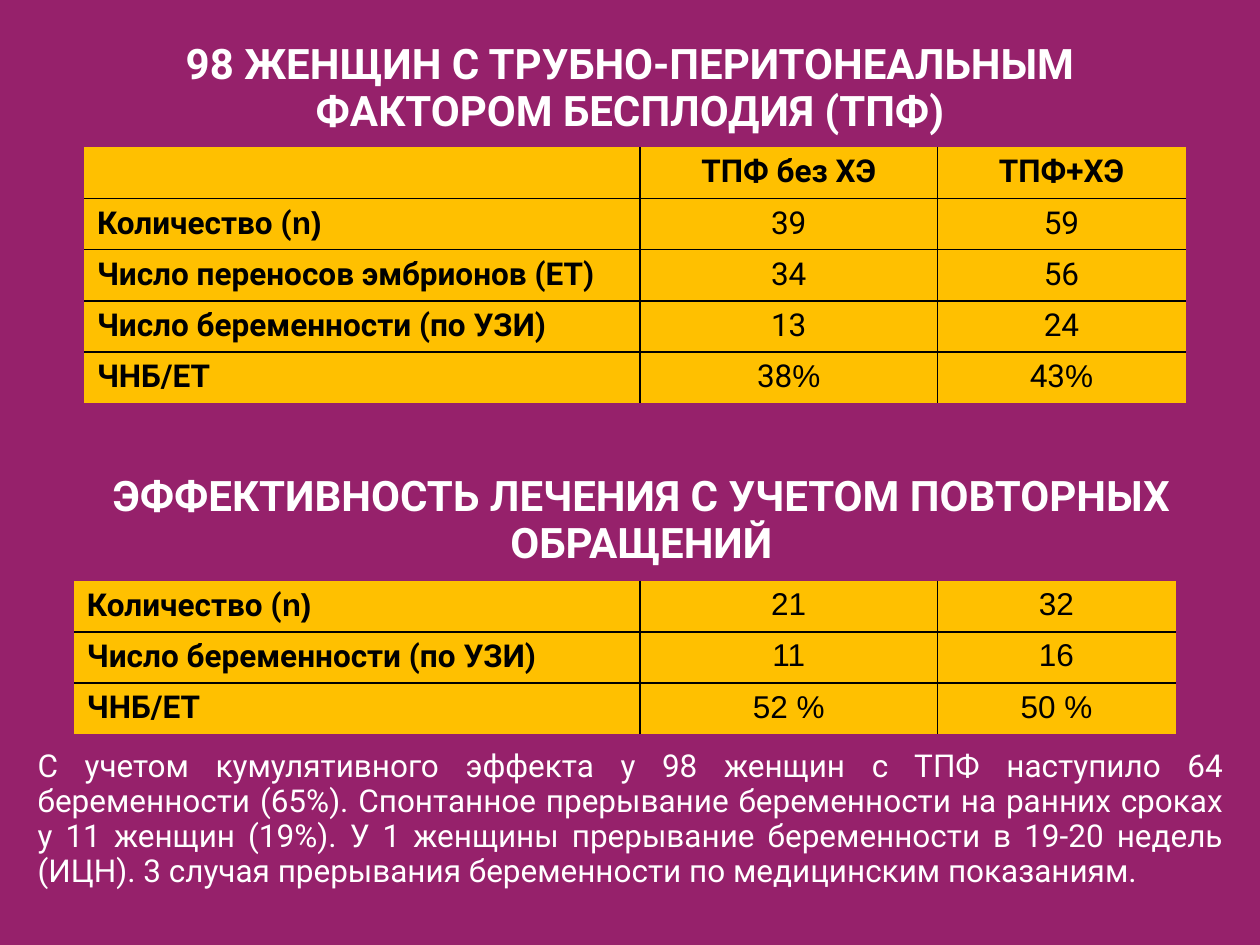
from lxml.etree import SubElement
from pptx import Presentation
from pptx.dml.color import RGBColor
from pptx.enum.text import MSO_ANCHOR as Anchor, MSO_AUTO_SIZE as AutoSize, PP_ALIGN as Align
from pptx.oxml.ns import qn
from pptx.util import Inches, Pt

PURPLE, AMBER, WHITE, BLACK = "96216B", "FFC000", "FFFFFF", "000000"
ROW = 0.406
HEADING_HEIGHT = 0.95


def write(frame, text, size=18, color=BLACK, bold=False, align=Align.LEFT, spacing=None):
    """Write one paragraph; the part after "|" is set in Arial, the rest in Roboto."""
    para = frame.paragraphs[0]
    para.alignment = align
    para.line_spacing = spacing
    for part, font in zip(text.split("|"), ("Roboto", "Arial")):
        if part:
            span = para.add_run()
            span.text = part
            span.font.name = font
            span.font.size = Pt(size)
            span.font.bold = bold
            span.font.color.rgb = RGBColor.from_string(color)


def draw_edges(cell, inner):
    """Rule the inner edges of a cell in black and leave the outer ones bare."""
    props = cell._tc.get_or_add_tcPr()
    for side in ("L", "R", "T", "B"):
        line = SubElement(props, qn(f"a:ln{side}"), w=str(Pt(1)))
        if side in inner:
            fill = SubElement(line, qn("a:solidFill"))
            SubElement(fill, qn("a:srgbClr"), val=BLACK)
        else:
            SubElement(line, qn("a:noFill"))


deck = Presentation()
deck.slide_width, deck.slide_height = Inches(10), Inches(7.5)
page = deck.slides.add_slide(deck.slide_layouts[5])
page.background.fill.solid()
page.background.fill.fore_color.rgb = RGBColor.from_string(PURPLE)

# Title, second heading and conclusion
heading = dict(size=24, bold=True, align=Align.CENTER)
texts = [
    (page.shapes.title, 0.5, 0.23, 9,
     "98 ЖЕНЩИН С ТРУБНО-ПЕРИТОНЕАЛЬНЫМ ФАКТОРОМ БЕСПЛОДИЯ (ТПФ)", heading),
    (None, 0.59, 3.66, 9,
     "ЭФФЕКТИВНОСТЬ ЛЕЧЕНИЯ С УЧЕТОМ ПОВТОРНЫХ ОБРАЩЕНИЙ", heading),
    (None, 0.2, 6.03, 9.61,
     "С учетом кумулятивного эффекта у 98 женщин с ТПФ наступило 64 беременности (65%). "
     "Спонтанное прерывание беременности на ранних сроках у 11 женщин (19%). "
     "У 1 женщины прерывание беременности в 19-20 недель (ИЦН). "
     "3 случая прерывания беременности по медицинским показаниям.",
     dict(align=Align.JUSTIFY)),
]
for box, left, top, width, text, style in texts:
    box = box or page.shapes.add_textbox(0, 0, 0, 0)
    box.left, box.top = Inches(left), Inches(top)
    box.width, box.height = Inches(width), Inches(HEADING_HEIGHT)
    frame = box.text_frame
    frame.word_wrap = True
    frame.auto_size = AutoSize.NONE
    frame.vertical_anchor = Anchor.MIDDLE
    write(frame, text, color=WHITE, spacing=0.93, **style)

# Tables: left, top, column widths, rows
tables = [
    (0.67, 1.17, (4.41, 2.36, 1.97), [
        ("", "ТПФ без ХЭ", "ТПФ+ХЭ"),
        ("Количество (|n)", "39", "59"),
        ("Число переносов эмбрионов (ЕТ)", "34", "56"),
        ("Число беременности (по УЗИ)", "13", "24"),
        ("ЧНБ/ЕТ", "38|%", "43|%"),
    ]),
    (0.59, 4.61, (4.49, 2.36, 1.89), [
        ("Количество (|n)", "|21", "|32"),
        ("Число беременности (по УЗИ)", "|11", "|16"),
        ("ЧНБ/ЕТ", "|52 %", "|50 %"),
    ]),
]
for left, top, widths, rows in tables:
    table = page.shapes.add_table(
        len(rows), len(widths), Inches(left), Inches(top),
        Inches(sum(widths)), Inches(ROW * len(rows))).table
    table.first_row = table.horz_banding = False
    for column, width in zip(table.columns, widths):
        column.width = Inches(width)
    for r, row in enumerate(rows):
        table.rows[r].height = Inches(ROW)
        for c, text in enumerate(row):
            cell = table.cell(r, c)
            inner = {"L": c > 0, "R": c < len(widths) - 1, "T": r > 0, "B": r < len(rows) - 1}
            draw_edges(cell, [side for side, shown in inner.items() if shown])
            cell.fill.solid()
            cell.fill.fore_color.rgb = RGBColor.from_string(AMBER)
            is_header = not row[0]
            write(cell.text_frame, text, bold=is_header or c == 0,
                  align=Align.CENTER if c else Align.LEFT)

deck.save("out.pptx")
